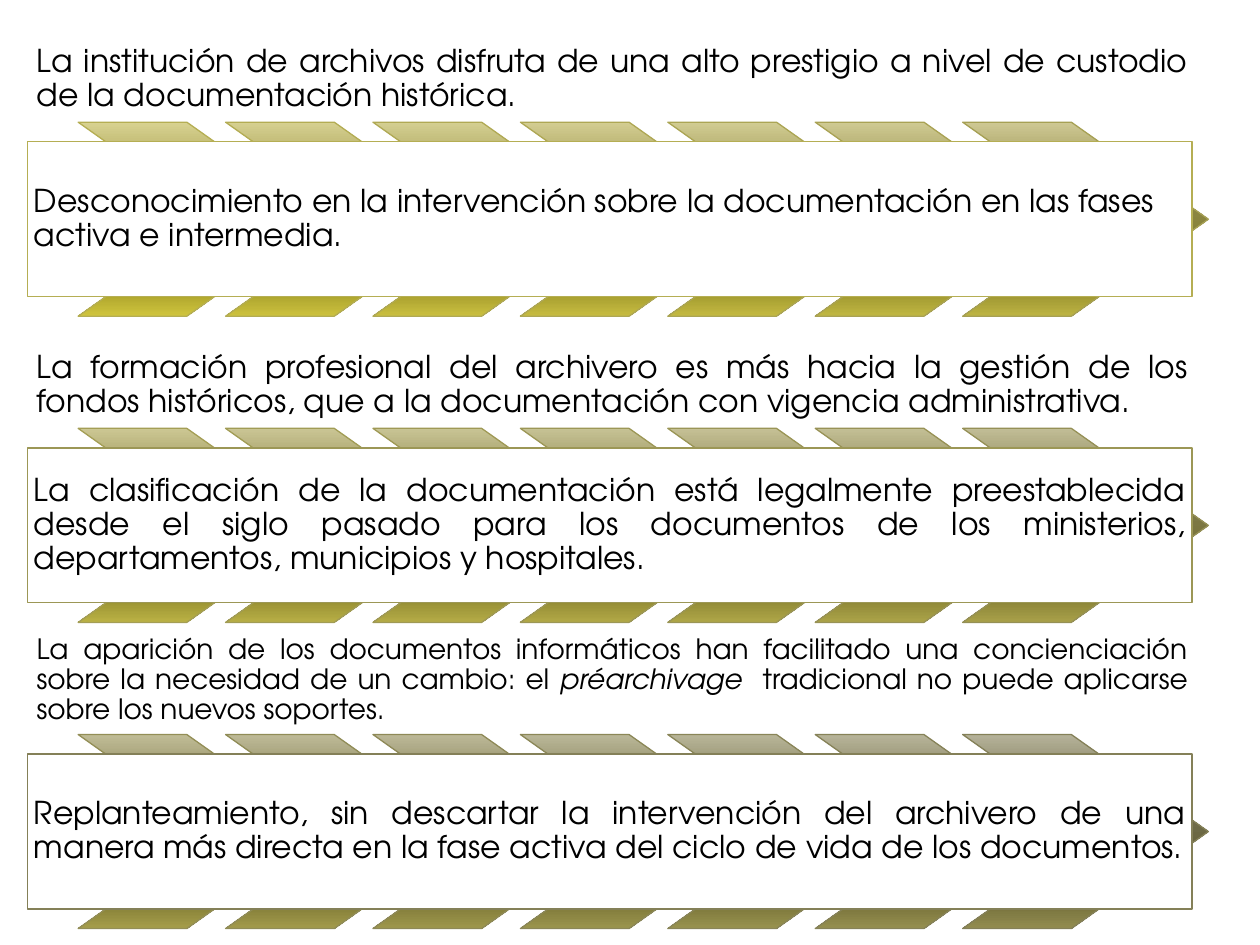
from lxml.etree import SubElement
from pptx import Presentation
from pptx.dml.color import RGBColor
from pptx.enum.shapes import MSO_SHAPE as Shape
from pptx.enum.text import MSO_ANCHOR as Anchor, PP_ALIGN as Align
from pptx.oxml.ns import qn
from pptx.util import Inches, Pt

FONT = "TeX Gyre Adventor"

# Content: each row has a heading (runs of text, italic), its size, a boxed text and its alignment
ROWS = [
    ([("La institución de archivos disfruta de una alto prestigio a nivel de custodio "
       "de la documentación histórica.", False)], 18,
     "Desconocimiento en la intervención sobre la documentación en las fases "
     "activa e intermedia.", Align.LEFT),
    ([("La formación profesional del archivero es más hacia la gestión de los "
       "fondos históricos, que a la documentación con vigencia administrativa.", False)], 18,
     "La clasificación de la documentación está legalmente preestablecida "
     "desde el siglo pasado para los documentos de los ministerios, "
     "departamentos, municipios y hospitales.", Align.JUSTIFY),
    ([("La aparición de los documentos informáticos han facilitado una concienciación "
       "sobre la necesidad de un cambio: el ", False),
      ("préarchivage ", True),
      (" tradicional no puede aplicarse sobre los nuevos soportes.", False)], 16,
     "Replanteamiento, sin descartar la intervención del archivero de una "
     "manera más directa en la fase activa del ciclo de vida de los documentos.", Align.JUSTIFY),
]

# Colours run from the first chevron to the last one: (stop %, first, last)
STOPS = [(0, "D8D290", "B5B299"), (25, "AAA358", "807C5C"), (38, "9A9348", "726F4F"),
         (55, "958F39", "6B6741"), (80, "9E962F", "6E6A3D"), (88, "ACA32C", "77723D"),
         (100, "D0C53D", "928C50")]
OUTLINE = ("B5AE53", "848058")

# Grid, in inches
LEFT, TOP, ROW_STEP = 0.22, 0.21, 2.43
HEADING_WIDTH, HEADING_HEIGHT = 9.28, 0.76
CHEVRONS, CHEVRON_LEFT, CHEVRON_STEP = 7, 0.62, 1.17
CHEVRON_WIDTH, CHEVRON_HEIGHT = 1.95, 1.54
BOX_WIDTH, BOX_HEIGHT = 9.24, 1.23
LAST = len(ROWS) * CHEVRONS - 1


def color(value):
    return RGBColor.from_string(value)


def blend(first, last, step):
    pairs = [(int(first[i:i + 2], 16), int(last[i:i + 2], 16)) for i in (0, 2, 4)]
    return "".join(f"{round(a + (b - a) * step / LAST):02X}" for a, b in pairs)


def add_outlined(slide, kind, area, step):
    shape = slide.shapes.add_shape(kind, *map(Inches, area))
    shape.shadow.inherit = False
    shape.line.color.rgb = color(blend(*OUTLINE, step))
    shape.line.width = Pt(0.75)
    return shape


def add_chevron(slide, area, step):
    shape = add_outlined(slide, Shape.CHEVRON, area, step)
    shape.adjustments[0] = 0.706
    shape.fill.gradient()
    shape.fill.gradient_angle = 270  # top to bottom
    stop_list = shape._element.spPr.find(qn("a:gradFill")).find(qn("a:gsLst"))
    for stop in list(stop_list):
        stop_list.remove(stop)
    for position, first, last in STOPS:
        stop = SubElement(stop_list, qn("a:gs"), pos=str(position * 1000))
        SubElement(stop, qn("a:srgbClr"), val=blend(first, last, step))


def write(shape, runs, size, align, anchor, inset):
    frame = shape.text_frame
    frame.word_wrap = True
    frame.vertical_anchor = anchor
    frame.margin_left = frame.margin_right = Inches(inset)
    frame.margin_top = frame.margin_bottom = Inches(inset)
    paragraph = frame.paragraphs[0]
    paragraph.alignment = align
    paragraph.line_spacing = 0.9
    for text, italic in runs:
        run = paragraph.add_run()
        run.text = text
        run.font.name = FONT
        run.font.size = Pt(size)
        run.font.italic = italic
        run.font.color.rgb = color("000000")


presentation = Presentation()
presentation.slide_width, presentation.slide_height = Inches(10), Inches(7.5)
slide = presentation.slides.add_slide(presentation.slide_layouts[6])

for row, (heading, size, boxed, align) in enumerate(ROWS):
    top = TOP + row * ROW_STEP
    chevron_top = top + HEADING_HEIGHT

    # Heading above the arrows
    area = (LEFT, top, HEADING_WIDTH, HEADING_HEIGHT)
    write(slide.shapes.add_textbox(*map(Inches, area)), heading, size,
          Align.JUSTIFY, Anchor.BOTTOM, 0.07)

    # Band of chevrons
    for column in range(CHEVRONS):
        add_chevron(slide, (CHEVRON_LEFT + column * CHEVRON_STEP, chevron_top,
                            CHEVRON_WIDTH, CHEVRON_HEIGHT), row * CHEVRONS + column)

    # White box centred over the band
    box_top = chevron_top + (CHEVRON_HEIGHT - BOX_HEIGHT) / 2
    box = add_outlined(slide, Shape.RECTANGLE, (LEFT, box_top, BOX_WIDTH, BOX_HEIGHT),
                       row * LAST / (len(ROWS) - 1))
    box.fill.solid()
    box.fill.fore_color.rgb = color("FFFFFF")
    write(box, [(boxed, False)], 18, align, Anchor.MIDDLE, 0.05)

presentation.save("out.pptx")
